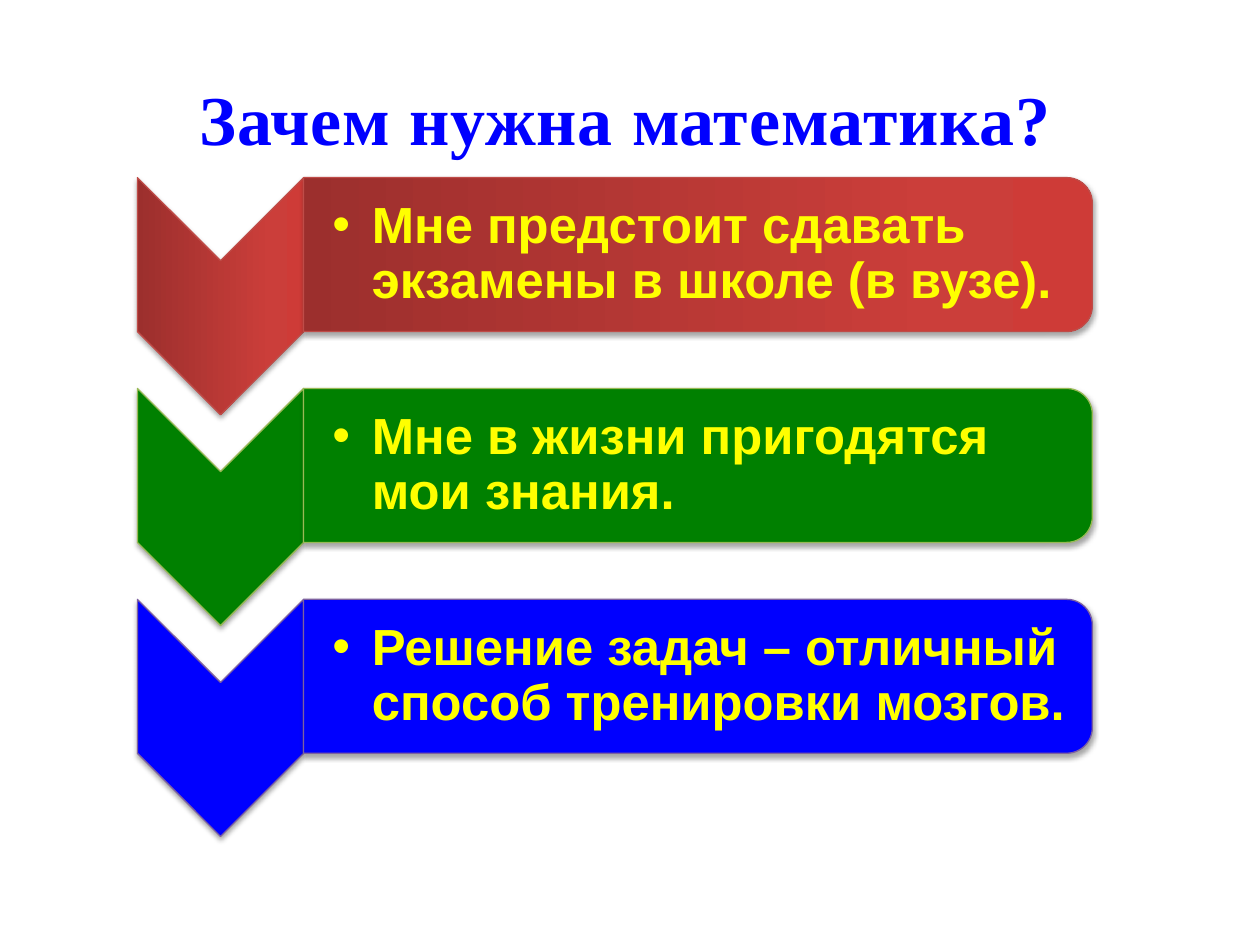
from pptx import Presentation
from pptx.dml.color import RGBColor
from pptx.enum.shapes import MSO_SHAPE as SHAPE
from pptx.enum.text import MSO_ANCHOR as ANCHOR, PP_ALIGN as ALIGN
from pptx.oxml import parse_xml
from pptx.oxml.ns import nsdecls, qn
from pptx.util import Pt
from copy import deepcopy
from lxml.etree import SubElement

BLUE = RGBColor(0x00, 0x00, 0xFF)
GREEN = RGBColor(0x00, 0x80, 0x00)
YELLOW = RGBColor(0xFF, 0xFF, 0x00)
RED_DARK = RGBColor(0x9C, 0x2F, 0x2D)
RED_LIGHT = RGBColor(0xCB, 0x3E, 0x3A)
RED_END = RGBColor(0xCE, 0x3B, 0x37)
RED_LINE = RGBColor(0xBF, 0x4C, 0x48)
GREEN_LINE = RGBColor(0x98, 0xB9, 0x55)
PURPLE_LINE = RGBColor(0x7D, 0x60, 0xA0)

RED_STOPS = ((0, RED_DARK), (0.8, RED_LIGHT), (1, RED_END))
ROWS = (
    ("Мне предстоит сдавать экзамены в школе (в вузе).", RED_STOPS, RED_LINE),
    ("Мне в жизни пригодятся мои знания.", ((0, GREEN),), GREEN_LINE),
    ("Решение задач – отличный способ тренировки мозгов.", ((0, BLUE),), PURPLE_LINE),
)
TOP, PITCH = 101.5, 120.5
LEFT, CHEVRON_W, CHEVRON_H = 78.5, 95, 135.5
BAR_W, BAR_H = 450.7, 88


def place(s, left, top, width, height):
    s.left, s.top, s.width, s.height = Pt(left), Pt(top), Pt(width), Pt(height)


def write(tf, text, *, font, size, color, align=ALIGN.LEFT, spacing=None,
          tracking=None, hang=None):
    tf.word_wrap = True
    tf.vertical_anchor = ANCHOR.MIDDLE
    p = tf.paragraphs[0]
    if hang:
        p.level = 1
        pPr = p._p.get_or_add_pPr()
        pPr.set("marL", str(Pt(hang)))
        pPr.set("indent", str(-Pt(hang)))
        SubElement(pPr, qn("a:buFont")).set("typeface", "Arial")
        SubElement(pPr, qn("a:buChar")).set("char", "•")
    p.alignment = align
    p.line_spacing = spacing
    r = p.add_run()
    r.text = text
    r.font.name, r.font.size, r.font.bold = font, Pt(size), True
    r.font.color.rgb = color
    if tracking:
        r._r.get_or_add_rPr().set("spc", str(tracking))


def paint(fill, stops):
    if len(stops) == 1:
        fill.solid()
        fill.fore_color.rgb = stops[0][1]
        return
    fill.gradient()
    fill.gradient_angle = 90
    last = fill.gradient_stops[-1]._gs
    for _ in stops[2:]:
        last.addnext(deepcopy(last))
    for stop, (position, color) in zip(fill.gradient_stops, stops):
        stop.position = position
        stop.color.rgb = color


def add_shadow(s):
    s.shadow.inherit = False
    s._element.spPr.find(qn("a:effectLst")).append(parse_xml(
        f'<a:outerShdw {nsdecls("a")} blurRad="{Pt(3.1)}" dist="{Pt(1.8)}" '
        'dir="5400000" rotWithShape="0"><a:srgbClr val="000000">'
        '<a:alpha val="35000"/></a:srgbClr></a:outerShdw>'))


def add_turned_shape(slide, kind, left, top, width, height, stops, line):
    shift = (width - height) / 2
    s = slide.shapes.add_shape(kind, Pt(left + shift), Pt(top - shift),
                               Pt(height), Pt(width))
    s.rotation = 90
    paint(s.fill, stops)
    s.line.color.rgb = line
    s.line.width = Pt(0.75)
    add_shadow(s)


def add_label(slide, text, left, top):
    s = slide.shapes.add_textbox(Pt(left), Pt(top), Pt(446.4), Pt(79.2))
    tf = s.text_frame
    tf.margin_left = Pt(16.5)
    tf.margin_right = tf.margin_top = tf.margin_bottom = Pt(1.4)
    write(tf, text, font="Arial", size=29, color=YELLOW, spacing=0.9, hang=22.5)


def add_row(slide, top, text, stops, line):
    bar_left = LEFT + CHEVRON_W
    add_turned_shape(slide, SHAPE.CHEVRON, LEFT, top, CHEVRON_W, CHEVRON_H, stops, line)
    add_turned_shape(slide, SHAPE.ROUND_2_SAME_RECTANGLE, bar_left, top,
                     BAR_W, BAR_H, stops, line)
    add_label(slide, text, bar_left, top + 4.4)


def add_title(slide, text):
    s = slide.shapes.title
    place(s, 95.8, 39.6, 523.4, 55.4)
    write(s.text_frame, text, font="Times New Roman", size=40, color=BLUE,
          align=ALIGN.CENTER, tracking=50)


def main():
    prs = Presentation()
    prs.slide_width, prs.slide_height = Pt(720), Pt(540)
    slide = prs.slides.add_slide(prs.slide_layouts[5])
    add_title(slide, "Зачем нужна математика?")
    for i, row in enumerate(ROWS):
        add_row(slide, TOP + i * PITCH, *row)
    prs.save("out.pptx")


if __name__ == "__main__":
    main()
